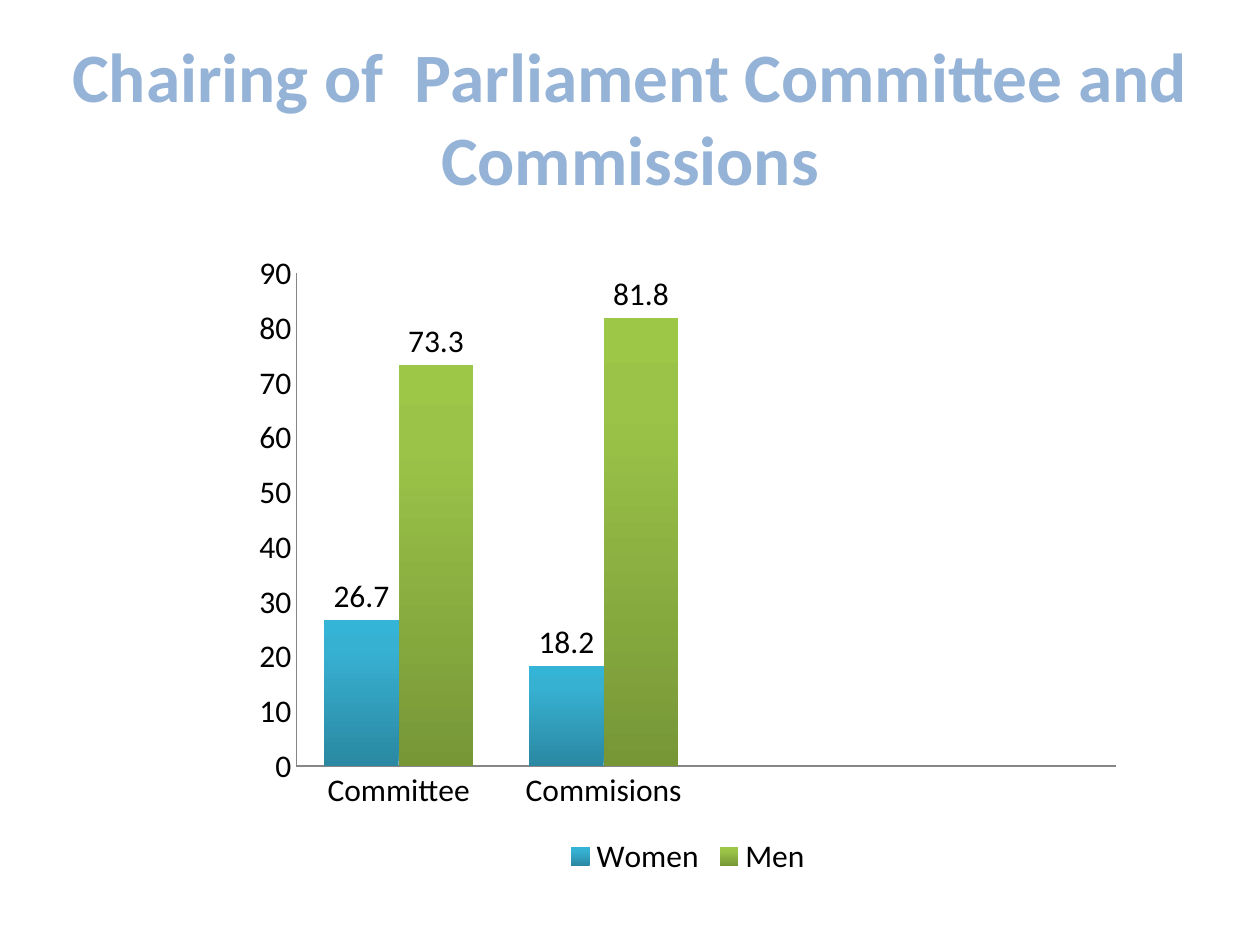
from copy import deepcopy
from pptx import Presentation
from pptx.chart.data import CategoryChartData as Data
from pptx.dml.color import RGBColor
from pptx.enum.chart import (XL_CHART_TYPE as Kind, XL_LABEL_POSITION as Spot,
                             XL_LEGEND_POSITION as Side, XL_TICK_MARK as Tick)
from pptx.enum.text import MSO_ANCHOR as Anchor, PP_ALIGN as Align
from pptx.oxml.ns import qn
from pptx.util import Pt

FACE = "Calibri"
CATS = ["Committee", "Commisions", "", ""]  # the last two slots stay empty
# name, values, gradient stops from bottom to top
ROWS = [
    ("Women", [26.7, 18.2, None, None], ["2A88A2", "37B1D2", "34B4D6"]),
    ("Men", [73.3, 81.8, None, None], ["779737", "9BC348", "9DC746"]),
]


def color(code):
    return RGBColor.from_string(code)


def style(font, size, code="000000", bold=False):
    font.name, font.size, font.bold = FACE, Pt(size), bold
    font.color.rgb = color(code)


def write(slide, box, text, size, code, bold=False, align=Align.CENTER):
    frame = slide.shapes.add_textbox(*map(Pt, box)).text_frame
    frame.word_wrap = True
    frame.vertical_anchor = Anchor.MIDDLE
    para = frame.paragraphs[0]
    para.alignment = align
    run = para.add_run()
    run.text = text
    style(run.font, size, code, bold)


def shade(series, codes):
    """Fill the bars with a three-stop gradient, first stop at the bottom."""
    fill = series.format.fill
    fill.gradient()
    fill.gradient_angle = 90
    stops = series.format.element.find(".//" + qn("a:gsLst")) if hasattr(
        series.format, "element") else next(series._element.iter(qn("a:gsLst")))
    stops.append(deepcopy(stops[-1]))
    for stop, code, place in zip(fill.gradient_stops, codes, (0, 0.8, 1)):
        stop.color.rgb = color(code)
        stop.position = place


def draw_chart(slide, box):
    data = Data()
    data.categories = CATS
    for name, vals, _ in ROWS:
        data.add_series(name, vals)
    chart = slide.shapes.add_chart(Kind.COLUMN_CLUSTERED, *map(Pt, box), data).chart
    style(chart.font, 18)
    chart.has_title = False

    # Legend
    chart.has_legend = True
    chart.legend.position = Side.BOTTOM
    chart.legend.include_in_layout = False

    # Axes
    for axis in (chart.category_axis, chart.value_axis):
        axis.has_major_gridlines = False
        axis.major_tick_mark = axis.minor_tick_mark = Tick.NONE
        axis.format.line.color.rgb = color("868686")
    val = chart.value_axis
    val.minimum_scale, val.maximum_scale, val.major_unit = 0, 90, 10

    # Bars and their labels
    plot = chart.plots[0]
    plot.gap_width, plot.overlap = 75, 0
    plot.vary_by_categories = False
    for series, (_, _, codes) in zip(plot.series, ROWS):
        shade(series, codes)
        labels = series.data_labels
        labels.show_value = True
        labels.position = Spot.OUTSIDE_END


def main():
    deck = Presentation()
    deck.slide_width, deck.slide_height = Pt(720), Pt(540)
    slide = deck.slides.add_slide(deck.slide_layouts[6])
    write(slide, (24, 21.6, 672, 90),
          "Chairing of  Parliament Committee and Commissions",
          size=39.6, code="95B3D7", bold=True)
    draw_chart(slide, (138, 138, 510, 366))
    deck.save("out.pptx")


if __name__ == "__main__":
    main()
